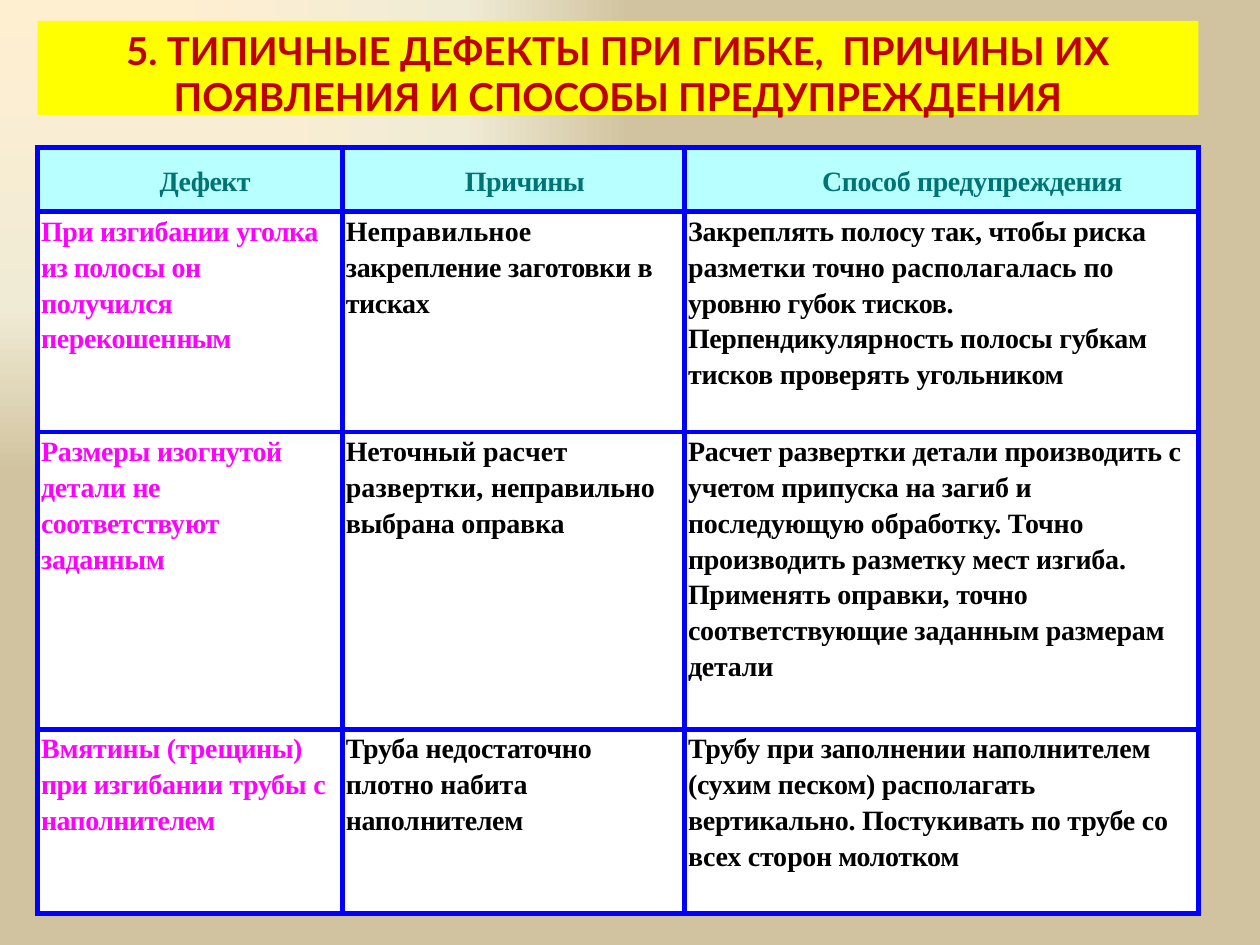
import pptx
import pptx.dml.color
import pptx.enum.shapes
import pptx.enum.text
import pptx.oxml
import pptx.oxml.ns
import pptx.util
from lxml import etree

Cm = pptx.util.Cm
Pt = pptx.util.Pt
ALIGN = pptx.enum.text.PP_ALIGN
ANCHOR = pptx.enum.text.MSO_ANCHOR

TITLE = "5. ТИПИЧНЫЕ ДЕФЕКТЫ ПРИ ГИБКЕ,  ПРИЧИНЫ ИХ ПОЯВЛЕНИЯ И СПОСОБЫ ПРЕДУПРЕЖДЕНИЯ"
COLUMN_WIDTHS = [6.14, 6.9, 10.36]
ROW_HEIGHTS = [1.3, 4.44, 5.99, 3.71]
HEADER_INDENTS = [0.61, 0.46, 1.24]
HEADERS = [
    [("Дефект", -0.3)],
    [("Причины", -0.3)],
    [("Способ предупреждения", -0.2)],
]
DEFECTS = [
    [
        [("При изгибании ", -0.2), ("уголка из поло", -0.3),
         ("сы он получился перекошен", -0.2), ("ным", -0.6)],
        [("Неправильное ", 0.1), ("закрепление заготовки в ", -0.1), ("тисках", -0.2)],
        [("Закреплять полосу так, чтобы риска ", -0.1),
         ("разметки точно располагалась по ", 0),
         ("уровню губок тисков. Перпендикуляр", -0.2),
         ("ность полосы губкам тисков проверять ", -0.1), ("угольником", -0.2)],
    ],
    [
        [("Размеры изо", -0.1), ("гнутой детали ", -0.2),
         ("не соответству", -0.3), ("ют заданным", -0.2)],
        [("Неточный рас", 0), ("чет развертки, ", 0.1),
         ("неправильно выбрана оправка", -0.1)],
        [("Расчет развертки детали производить с учетом припуска на загиб и "
          "последующую обработку. Точно производить разметку мест изгиба. "
          "Применять оправки, точно соответствующие заданным размерам детали", -0.1)],
    ],
    [
        [("Вмятины (тре", -0.1), ("щины) при из", -0.3),
         ("гибании трубы ", -0.2), ("с наполнителем", -0.3)],
        [("Труба недостаточно плотно набита напол", -0.1), ("нителем", -0.2)],
        [("Трубу при заполнении наполнителем (сухим песком) располагать "
          "вертикально. Постукивать по трубе со всех сто", -0.1), ("рон молотком", -0.2)],
    ],
]


def rgb(hex_color):
    return pptx.dml.color.RGBColor.from_string(hex_color)


def style_run(run, font_name, size, color):
    run.font.name = font_name
    run.font.size = Pt(size)
    run.font.bold = True
    run.font.color.rgb = rgb(color)


def paint_background(slide):
    stops = [(0, "FFEFD1"), (65, "F0EBD5"), (100, "D1C39F")]
    stop_xml = "".join(
        f'<a:gs pos="{position * 1000}"><a:srgbClr val="{color}"/></a:gs>'
        for position, color in stops
    )
    gradient = pptx.oxml.parse_xml(
        f'<a:gradFill {pptx.oxml.ns.nsdecls("a")} rotWithShape="1">'
        f'<a:gsLst>{stop_xml}</a:gsLst>'
        '<a:path path="rect"><a:fillToRect r="100000" b="100000"/></a:path>'
        '</a:gradFill>'
    )
    slide.background.fill.solid()
    properties = slide.element.cSld.find(".//" + pptx.oxml.ns.qn("p:bgPr"))
    properties.replace(properties[0], gradient)


def add_title(slide, left, top, width, height):
    banner = slide.shapes.add_shape(
        pptx.enum.shapes.MSO_SHAPE.RECTANGLE, left, top, width, height
    )
    banner.shadow.inherit = False
    banner.fill.solid()
    banner.fill.fore_color.rgb = rgb("FFFF00")
    banner.line.fill.background()
    frame = banner.text_frame
    frame.word_wrap = True
    frame.vertical_anchor = ANCHOR.TOP
    frame.text = TITLE
    heading = frame.paragraphs[0]
    heading.alignment = ALIGN.CENTER
    style_run(heading.runs[0], "Lato", 22, "C00000")


def add_borders(cell, color, width):
    properties = cell._tc.get_or_add_tcPr()
    for index, side in enumerate(("lnL", "lnR", "lnT", "lnB")):
        border = etree.Element(pptx.oxml.ns.qn(f"a:{side}"), w=str(Pt(width)))
        fill = etree.SubElement(border, pptx.oxml.ns.qn("a:solidFill"))
        etree.SubElement(fill, pptx.oxml.ns.qn("a:srgbClr"), val=color)
        properties.insert(index, border)


def fill_cell(cell, pieces, text_color, fill_color):
    cell.margin_left = cell.margin_right = Cm(0.07)
    cell.margin_top = cell.margin_bottom = 0
    cell.fill.solid()
    cell.fill.fore_color.rgb = rgb(fill_color)
    add_borders(cell, "0000FF", 3)
    paragraph = cell.text_frame.paragraphs[0]
    paragraph.line_spacing = 1.15
    for text, spacing in pieces:
        run = paragraph.add_run()
        run.text = text
        style_run(run, "Times New Roman", 16, text_color)
        run.font._element.set("spc", str(round(spacing * 100)))
    return paragraph


def add_defect_table(slide, left, top, width, height):
    table = slide.shapes.add_table(
        len(ROW_HEIGHTS), len(COLUMN_WIDTHS), left, top, width, height
    ).table
    table.first_row = table.horz_banding = False
    for column, share in zip(table.columns, COLUMN_WIDTHS):
        column.width = round(width * share / sum(COLUMN_WIDTHS))
    for row, share in zip(table.rows, ROW_HEIGHTS):
        row.height = round(height * share / sum(ROW_HEIGHTS))
    for column, (pieces, indent) in enumerate(zip(HEADERS, HEADER_INDENTS)):
        cell = table.cell(0, column)
        cell.vertical_anchor = ANCHOR.MIDDLE
        heading = fill_cell(cell, pieces, "007373", "B8FFFF")
        heading.alignment = ALIGN.CENTER
        heading._p.get_or_add_pPr().set("marL", str(Cm(indent)))
    for row, defect in enumerate(DEFECTS, 1):
        for column, pieces in enumerate(defect):
            text_color = "000000" if column else "FF00FF"
            fill_cell(table.cell(row, column), pieces, text_color, "FFFFFF")


def main():
    presentation = pptx.Presentation()
    presentation.slide_width = Cm(25.4)
    presentation.slide_height = Cm(19.05)
    slide = presentation.slides.add_slide(presentation.slide_layouts[6])
    paint_background(slide)
    add_title(slide, Cm(0.76), Cm(0.42), Cm(23.4), Cm(1.9))
    add_defect_table(slide, Cm(0.76), Cm(2.97), Cm(23.4), Cm(15.44))
    presentation.save("out.pptx")


if __name__ == "__main__":
    main()
